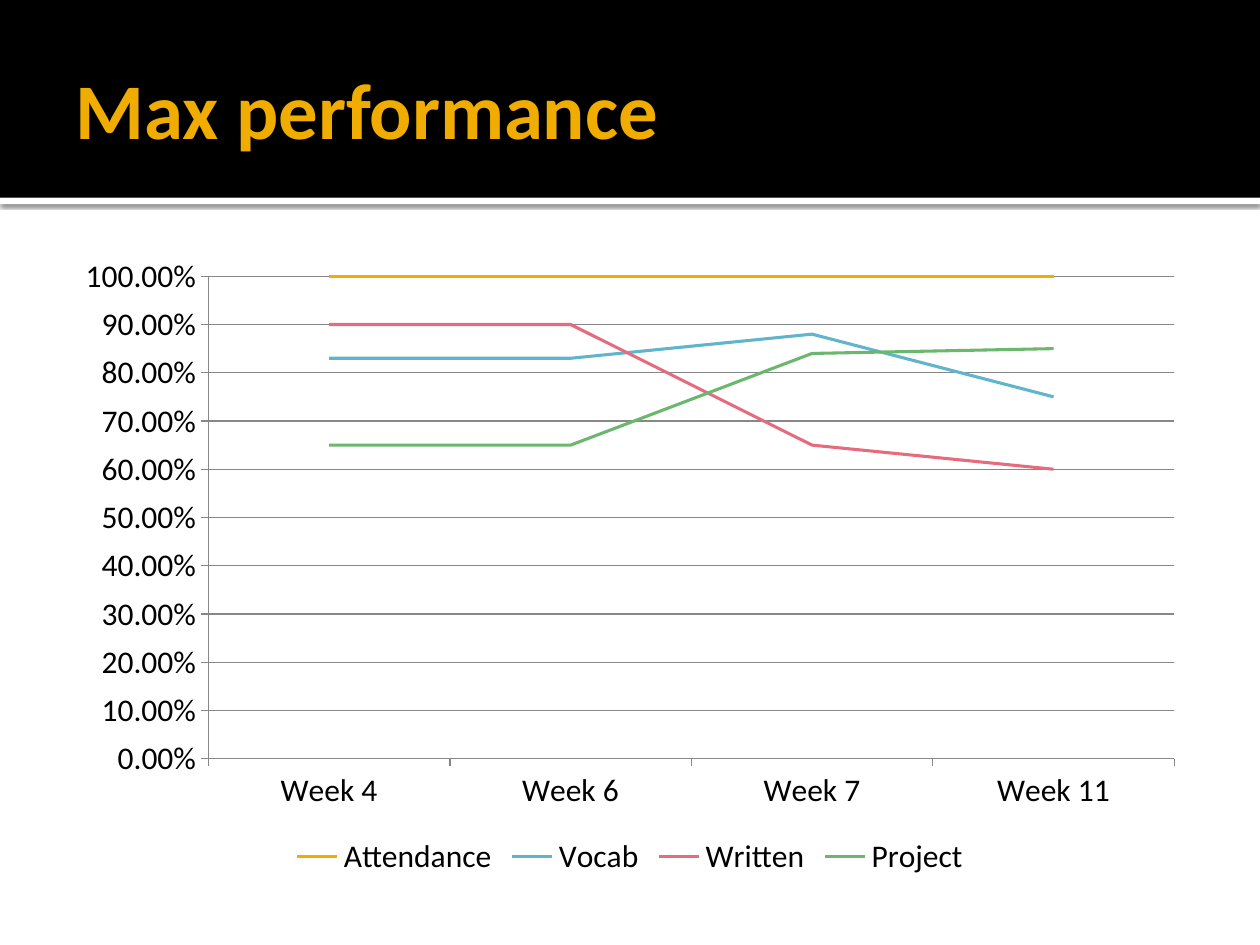
from lxml import etree
from pptx import Presentation
from pptx.chart.data import CategoryChartData
from pptx.dml.color import RGBColor
from pptx.enum.chart import XL_CHART_TYPE as ChartType, XL_LEGEND_POSITION as LegendPosition, XL_TICK_MARK as TickMark
from pptx.enum.shapes import MSO_SHAPE as Shape
from pptx.enum.text import MSO_ANCHOR as Anchor
from pptx.oxml import parse_xml
from pptx.oxml.ns import nsdecls
from pptx.util import Inches, Pt

FONT = "Calibri"
COLORS = {
    "white": "FFFFFF",
    "black": "000000",
    "grid": "878787",
    "gold": "F0AD00",
    "blue": "60B5CC",
    "rose": "E66C7D",
    "green": "6BB76D",
}
WEEKS = ["Week 4", "Week 6", "Week 7", "Week 11"]
SERIES = [
    ("Attendance", "gold", (1, 1, 1, 1)),
    ("Vocab", "blue", (0.83, 0.83, 0.88, 0.75)),
    ("Written", "rose", (0.9, 0.9, 0.65, 0.6)),
    ("Project", "green", (0.65, 0.65, 0.84, 0.85)),
]


def color(name):
    return RGBColor.from_string(COLORS[name])


def add_band(slide, left, top, width, height, fill):
    shape = slide.shapes.add_shape(
        Shape.RECTANGLE, Inches(left), Inches(top), Inches(width), Inches(height))
    shape.shadow.inherit = False
    shape.fill.solid()
    shape.fill.fore_color.rgb = color(fill)
    shape.line.fill.background()
    return shape


def add_drop_shadow(shape):
    effects = shape.element.spPr.find("{*}effectLst")
    shadow = parse_xml(
        f'<a:outerShdw {nsdecls("a")} blurRad="{Pt(2.5)}" dist="{Pt(0.8)}" '
        f'dir="5400000" algn="t" rotWithShape="0">'
        f'<a:srgbClr val="{COLORS["black"]}"/></a:outerShdw>')
    alpha = etree.SubElement(shadow[0], shadow[0].tag.replace("srgbClr", "alpha"))
    alpha.set("val", "60000")
    effects.append(shadow)


def add_header(slide, left, top, width, height, title):
    strip = add_band(slide, left, top + height, width, 0.05, "white")
    add_drop_shadow(strip)
    add_band(slide, left, top, width, height, "black")
    box = slide.shapes.add_textbox(
        Inches(left + 0.5), Inches(top + 0.17), Inches(width - 1), Inches(height - 0.2))
    frame = box.text_frame
    frame.word_wrap = True
    frame.vertical_anchor = Anchor.MIDDLE
    frame.margin_left = Inches(0.1)
    frame.margin_top = frame.margin_right = frame.margin_bottom = Inches(0.05)
    run = frame.paragraphs[0].add_run()
    run.text = title
    run.font.name = FONT
    run.font.size = Pt(45)
    run.font.bold = True
    run.font.color.rgb = color("gold")


def style_line(line, name, width):
    line.color.rgb = color(name)
    line.width = Pt(width)


def add_performance_chart(slide, left, top, width, height):
    data = CategoryChartData(number_format="0.00%")
    data.categories = WEEKS
    for name, _, values in SERIES:
        data.add_series(name, values)
    chart = slide.shapes.add_chart(
        ChartType.LINE, Inches(left), Inches(top), Inches(width), Inches(height), data).chart
    chart.has_title = False
    chart.font.name = FONT
    chart.font.size = Pt(18)
    chart.font.color.rgb = color("black")
    chart.has_legend = True
    chart.legend.position = LegendPosition.BOTTOM
    chart.legend.include_in_layout = False

    for axis in (chart.category_axis, chart.value_axis):
        axis.major_tick_mark = TickMark.OUTSIDE
        axis.minor_tick_mark = TickMark.NONE
        style_line(axis.format.line, "grid", 0.75)
    value_axis = chart.value_axis
    value_axis.minimum_scale = 0
    value_axis.maximum_scale = 1
    value_axis.major_unit = 0.1
    value_axis.has_major_gridlines = True
    style_line(value_axis.major_gridlines.format.line, "grid", 0.75)
    value_axis.tick_labels.number_format = "0.00%"
    value_axis.tick_labels.number_format_is_linked = False

    plot = chart.plots[0]
    plot.vary_by_categories = False
    for series, (_, line_color, _) in zip(plot.series, SERIES):
        series.smooth = False
        style_line(series.format.line, line_color, 1.75)


def main():
    presentation = Presentation()
    presentation.slide_width = Inches(10)
    presentation.slide_height = Inches(7.5)
    slide = presentation.slides.add_slide(presentation.slide_layouts[6])
    slide.background.fill.solid()
    slide.background.fill.fore_color.rgb = color("white")
    add_header(slide, 0, 0, 10, 1.57, "Max performance")
    add_performance_chart(slide, 0.5, 1.94, 9, 5.06)
    presentation.save("out.pptx")


if __name__ == "__main__":
    main()
